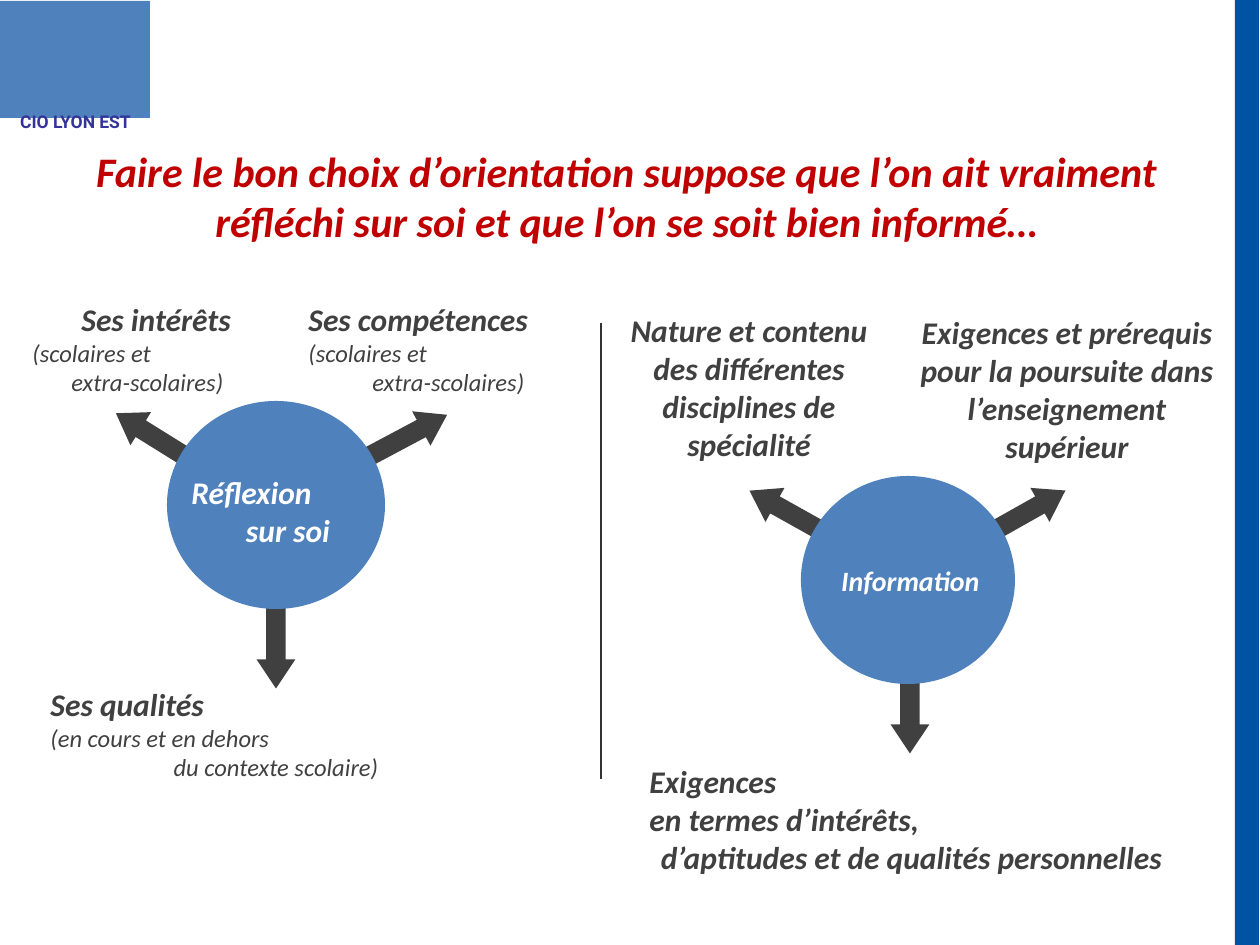
from dataclasses import dataclass

import pptx
import pptx.dml.color
import pptx.enum.shapes
import pptx.enum.text
import pptx.oxml.ns
import pptx.util
from lxml import etree

EMU_PER_PX = 914400 // 126
SHAPE = pptx.enum.shapes.MSO_SHAPE
LEFT = pptx.enum.text.PP_ALIGN.LEFT
CENTER = pptx.enum.text.PP_ALIGN.CENTER


@dataclass(frozen=True)
class Theme:
    sidebar: str = "0052A2"
    accent: str = "4F81BD"
    title: str = "C00000"
    dark: str = "404040"
    divider: str = "333333"
    office: str = "333399"
    white: str = "FFFFFF"
    body_font: str = "Calibri"
    office_font: str = "Roboto"
    title_size: int = 24
    heading_size: int = 18
    hub_size: int = 16
    detail_size: int = 14
    office_size: int = 10


THEME = Theme()


@dataclass(frozen=True)
class Box:
    left: int
    top: int
    width: int
    height: int

    def emu(self) -> list[int]:
        return [px(n) for n in (self.left, self.top, self.width, self.height)]


@dataclass(frozen=True)
class Line:
    text: str
    size: int = THEME.heading_size
    align: int = CENTER
    bold: bool = True
    italic: bool = True
    color: str = THEME.dark
    font: str = THEME.body_font
    indent: int = 0


@dataclass(frozen=True)
class Label:
    box: Box
    lines: tuple[Line, ...]


@dataclass(frozen=True)
class Arrow:
    left: int
    top: int
    angle: float


@dataclass(frozen=True)
class Hub:
    circle: Box
    name: Label
    arrows: tuple[Arrow, ...]
    topics: tuple[Label, ...]


def px(count: int) -> int:
    return pptx.util.Emu(count * EMU_PER_PX)


def rgb(value: str) -> pptx.dml.color.RGBColor:
    return pptx.dml.color.RGBColor.from_string(value)


def write_lines(frame, lines: tuple[Line, ...]) -> None:
    frame.word_wrap = True
    frame.auto_size = pptx.enum.text.MSO_AUTO_SIZE.NONE
    frame.vertical_anchor = pptx.enum.text.MSO_ANCHOR.TOP
    frame.text = "\n".join(line.text for line in lines)
    for paragraph, line in zip(frame.paragraphs, lines):
        paragraph.alignment = line.align
        if line.indent:
            paragraph._p.get_or_add_pPr().set("indent", str(px(line.indent)))
        for run in paragraph.runs:
            run.font.name = line.font
            run.font.size = pptx.util.Pt(line.size)
            run.font.bold = line.bold
            run.font.italic = line.italic
            run.font.color.rgb = rgb(line.color)


def add_label(slide, label: Label) -> None:
    write_lines(slide.shapes.add_textbox(*label.box.emu()).text_frame, label.lines)


def add_solid(slide, kind: int, box: Box, color: str):
    solid = slide.shapes.add_shape(kind, *box.emu())
    solid.shadow.inherit = False
    solid.fill.solid()
    solid.fill.fore_color.rgb = rgb(color)
    solid.line.fill.background()
    return solid


def add_hub(slide, hub: Hub) -> None:
    for arrow in hub.arrows:
        pointer = add_solid(slide, SHAPE.LEFT_ARROW, Box(arrow.left, arrow.top, 118, 39), THEME.dark)
        pointer.adjustments[0] = 0.5
        pointer.adjustments[1] = 0.75
        pointer.rotation = arrow.angle
    add_solid(slide, SHAPE.OVAL, hub.circle, THEME.accent)
    for label in (hub.name, *hub.topics):
        add_label(slide, label)


def add_divider(slide, x: int, top: int, bottom: int) -> None:
    divider = slide.shapes.add_connector(
        pptx.enum.shapes.MSO_CONNECTOR.STRAIGHT, px(x), px(top), px(x), px(bottom)
    )
    divider.line.color.rgb = rgb(THEME.divider)
    divider.line.width = pptx.util.Pt(1)
    etree.SubElement(divider._element.spPr, pptx.oxml.ns.qn("a:effectLst"))


def topic(box: Box, heading: str, opening: str, closing: str, indent: int = 0) -> Label:
    return Label(box, (
        Line(heading, align=LEFT, indent=indent),
        Line(opening, THEME.detail_size, LEFT, bold=False),
        Line(closing, THEME.detail_size, bold=False),
    ))


REFLECTION = Hub(
    circle=Box(167, 401, 218, 208),
    name=Label(Box(179, 467, 218, 88), (
        Line("Réflexion", align=LEFT, color=THEME.white),
        Line("sur soi", color=THEME.white),
    )),
    arrows=(Arrow(217, 610, 270), Arrow(107, 425, 31.9), Arrow(336, 423, 152)),
    topics=(
        topic(Box(20, 294, 255, 108), "Ses intérêts", "(scolaires et", "extra-scolaires)", 49),
        topic(Box(296, 294, 305, 108), "Ses compétences", "(scolaires et", "extra-scolaires)"),
        topic(Box(38, 679, 476, 108), "Ses qualités", "(en cours et en dehors", "du contexte scolaire)"),
    ),
)

INFORMATION = Hub(
    circle=Box(801, 476, 214, 208),
    name=Label(Box(804, 557, 213, 45), (
        Line("Information", THEME.hub_size, color=THEME.white),
    )),
    arrows=(Arrow(851, 675, 270), Arrow(742, 500, 29.2), Arrow(955, 500, 150.6)),
    topics=(
        Label(Box(607, 305, 284, 164), (
            Line("Nature et contenu des différentes disciplines de spécialité"),
        )),
        Label(Box(895, 307, 344, 164), (
            Line("Exigences et prérequis pour la poursuite dans l’enseignement supérieur"),
        )),
        Label(Box(637, 756, 549, 126), (
            Line("Exigences", align=LEFT),
            Line("en termes d’intérêts,", align=LEFT),
            Line("d’aptitudes et de qualités personnelles"),
        )),
    ),
)

TITLE = Label(Box(15, 139, 1223, 113), (
    Line(
        "Faire le bon choix d’orientation suppose que l’on ait vraiment "
        "réfléchi sur soi et que l’on se soit bien informé…",
        THEME.title_size, color=THEME.title,
    ),
))

OFFICE = Label(Box(-14, 105, 179, 34), (
    Line("CIO LYON EST", THEME.office_size, italic=False, color=THEME.office, font=THEME.office_font),
))


def main() -> None:
    deck = pptx.Presentation()
    deck.slide_width, deck.slide_height = px(1260), px(945)
    slide = deck.slides.add_slide(deck.slide_layouts[5])

    title = slide.shapes.title
    title.left, title.top, title.width, title.height = TITLE.box.emu()
    write_lines(title.text_frame, TITLE.lines)

    add_solid(slide, SHAPE.RECTANGLE, Box(1235, 0, 24, 945), THEME.sidebar)
    add_divider(slide, 601, 323, 779)
    for hub in (REFLECTION, INFORMATION):
        add_hub(slide, hub)
    add_solid(slide, SHAPE.RECTANGLE, Box(0, 1, 150, 117), THEME.accent)
    add_label(slide, OFFICE)

    deck.save("out.pptx")


if __name__ == "__main__":
    main()
